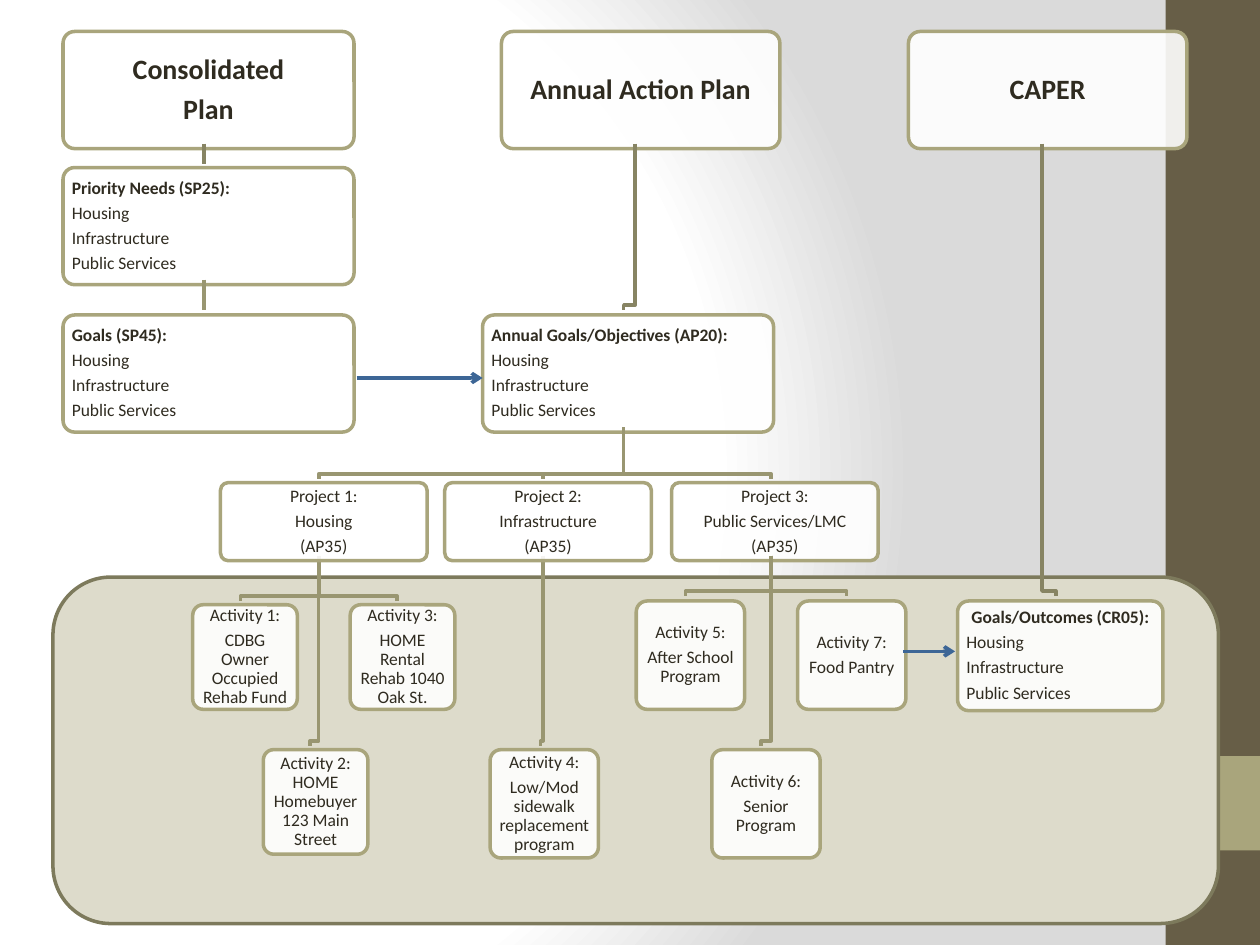
import pptx
import pptx.dml.color
import pptx.enum.shapes
import pptx.enum.text
import pptx.oxml
import pptx.oxml.ns
import pptx.util

Inches = pptx.util.Inches
Pt = pptx.util.Pt
Kind = pptx.enum.shapes.MSO_SHAPE
Align = pptx.enum.text.PP_ALIGN

HUES = {
    "white": "FFFFFF", "grey": "DADADA", "ink": "2F2B20",
    "brown": "675E47", "tan": "A9A57C", "panel": "DDDBCB", "edge": "7D7A5C",
    "main": "878463", "sub": "999671", "blue": "3D6696",
}
NEEDS = ["Housing", "Infrastructure", "Public Services"]


class Chart:
    font = "Calibri"
    weight = 2
    curve = 0.1

    def __init__(self, slide):
        self.slide = slide
        self.shapes = slide.shapes

    def hue(self, name):
        return pptx.dml.color.RGBColor.from_string(HUES[name])

    def back(self):
        """Fill the background with a round gradient, white to grey."""
        stops = "".join(
            f'<a:gs pos="{pos}"><a:srgbClr val="{HUES[name]}"/></a:gs>'
            for pos, name in ((0, "white"), (75000, "white"), (100000, "grey")))
        spaces = pptx.oxml.ns.nsdecls("p", "a")
        node = pptx.oxml.parse_xml(
            f'<p:bg {spaces}><p:bgPr><a:gradFill rotWithShape="1">'
            f'<a:gsLst>{stops}</a:gsLst><a:path path="circle">'
            '<a:fillToRect l="20000" t="50000" r="100000" b="50000"/></a:path>'
            '</a:gradFill><a:effectLst/></p:bgPr></p:bg>')
        self.slide.element.cSld.insert(0, node)

    def block(self, kind, area, fill, line=None):
        shape = self.shapes.add_shape(kind, *map(Inches, area))
        shape.shadow.inherit = False
        shape.fill.solid()
        shape.fill.fore_color.rgb = self.hue(fill)
        if line:
            self.stroke(shape, line)
        else:
            shape.line.fill.background()
        return shape

    def stroke(self, shape, name):
        shape.line.color.rgb = self.hue(name)
        shape.line.width = Pt(self.weight)

    def box(self, area, lines, size=10, inset=0.07, bold=0, left=None):
        """Draw a card; the first `bold` lines are bold, those from `left` on are left-aligned."""
        shape = self.block(Kind.ROUNDED_RECTANGLE, area, "white", "tan")
        shape.adjustments[0] = self.curve
        tone = shape.fill._xPr.find(".//" + pptx.oxml.ns.qn("a:srgbClr"))
        tone.append(pptx.oxml.parse_xml(
            f'<a:alpha {pptx.oxml.ns.nsdecls("a")} val="90000"/>'))
        frame = shape.text_frame
        frame.word_wrap = True
        frame.vertical_anchor = pptx.enum.text.MSO_ANCHOR.MIDDLE
        # The preset already insets its text by 0.29 of the corner radius.
        gap = Inches(inset - 0.29 * self.curve * min(area[2:]))
        frame.margin_left = frame.margin_right = gap
        frame.margin_top = frame.margin_bottom = gap
        for i, line in enumerate(lines):
            para = frame.add_paragraph() if i else frame.paragraphs[0]
            flush = left is not None and i >= left
            para.alignment = Align.LEFT if flush else Align.CENTER
            para.line_spacing = 0.9
            para.space_after = Pt(0.35 * size)
            run = para.add_run()
            run.text = line
            run.font.name = self.font
            run.font.size = Pt(size)
            run.font.bold = i < bold
            run.font.color.rgb = self.hue("ink")

    def head(self, x, wide, lines):
        self.box((x, 0.25, wide, 0.93), lines, 16, 0.09, bold=len(lines))

    def list(self, area, title, left=0):
        self.box(area, [title] + NEEDS, bold=1, left=left)

    def task(self, x, y, side, lines):
        self.box((x, y, side, side), lines)

    def plan(self, x, num, name):
        self.box((x, 3.83, 1.64, 0.62),
                 [f"Project {num}:", name, "(AP35)"], inset=0.06)

    def line(self, start, end, name):
        wire = self.shapes.add_connector(
            pptx.enum.shapes.MSO_CONNECTOR.STRAIGHT,
            *map(Inches, start + end))
        self.stroke(wire, name)
        props = wire._element.spPr
        props.append(props.makeelement(pptx.oxml.ns.qn("a:effectLst"), {}))
        return wire

    def arrow(self, start, end):
        edge = self.line(start, end, "blue").line._get_or_add_ln()
        edge.append(edge.makeelement(
            pptx.oxml.ns.qn("a:tailEnd"), {"type": "arrow"}))

    def link(self, start, end, name="sub"):
        """Join two cards, bending just above the lower one."""
        if start[0] == end[0]:
            self.line(start, end, name)
            return
        bend = end[1] - 0.04
        spots = [(start[0], bend), (end[0], bend), end]
        path = self.shapes.build_freeform(*map(Inches, start))
        path.add_line_segments(
            [(Inches(x), Inches(y)) for x, y in spots], close=False)
        shape = path.convert_to_shape()
        shape.shadow.inherit = False
        shape.fill.background()
        self.stroke(shape, name)


def main():
    deck = pptx.Presentation()
    deck.slide_width, deck.slide_height = Inches(10), Inches(7.5)
    chart = Chart(deck.slides.add_slide(deck.slide_layouts[6]))

    chart.back()
    chart.block(Kind.RECTANGLE, (9.25, 0, 0.75, 7.5), "brown")
    chart.block(Kind.RECTANGLE, (9.25, 6, 0.75, 0.75), "tan")
    chart.block(Kind.ROUNDED_RECTANGLE, (0.42, 4.58, 9.25, 2.75),
                "panel", "edge")

    chart.head(0.5, 2.31, ["Consolidated", "Plan"])
    chart.link((1.62, 1.14), (1.62, 1.3), "main")
    chart.list((0.5, 1.33, 2.31, 0.93), "Priority Needs (SP25):")
    chart.link((1.62, 2.22), (1.62, 2.46))
    chart.list((0.5, 2.5, 2.31, 0.93), "Goals (SP45):")

    chart.head(3.98, 2.21, ["Annual Action Plan"])
    chart.link((5.04, 1.14), (4.95, 2.46), "main")
    chart.list((3.83, 2.5, 2.31, 0.93), "Annual Goals/Objectives (AP20):")

    hub = (4.95, 3.39)
    one, two, three = (2.53, 4.41), (4.31, 4.41), (6.12, 4.41)

    chart.link(one, (1.91, 4.77))
    chart.task(1.53, 4.8, 0.83,
               ["Activity 1:", "CDBG Owner Occupied Rehab Fund"])
    chart.link(one, (2.46, 5.92))
    chart.task(2.09, 5.95, 0.83, ["Activity 2: HOME Homebuyer 123 Main Street"])
    chart.link(one, (3.15, 4.77))
    chart.task(2.78, 4.8, 0.83, ["Activity 3:", "HOME Rental Rehab 1040 Oak St."])
    chart.link(two, (4.29, 5.92))
    chart.task(3.89, 5.95, 0.86,
               ["Activity 4:", "Low/Mod sidewalk replacement program"])

    for spot in (two, one):
        chart.link(hub, (spot[0], 3.8))
    chart.plan(1.75, 1, "Housing")
    chart.plan(3.53, 2, "Infrastructure")
    chart.link(hub, (three[0], 3.8))
    chart.plan(5.33, 3, "Public Services/LMC")

    chart.link(three, (5.44, 4.73))
    chart.task(5.05, 4.77, 0.86, ["Activity 5:", "After School Program"])
    chart.link(three, (6.04, 5.92))
    chart.task(5.65, 5.95, 0.86, ["Activity 6:", "Senior Program"])
    chart.link(three, (6.72, 4.73))
    chart.task(6.33, 4.77, 0.86, ["Activity 7:", "Food Pantry"])

    chart.head(7.21, 2.21, ["CAPER"])
    chart.link((8.27, 1.14), (8.38, 4.73), "main")
    chart.list((7.6, 4.77, 1.63, 0.87), "Goals/Outcomes (CR05):", left=1)

    chart.arrow((2.83, 3), (3.83, 3))
    chart.arrow((7.17, 5.17), (7.58, 5.17))
    deck.save("out.pptx")


if __name__ == "__main__":
    main()
